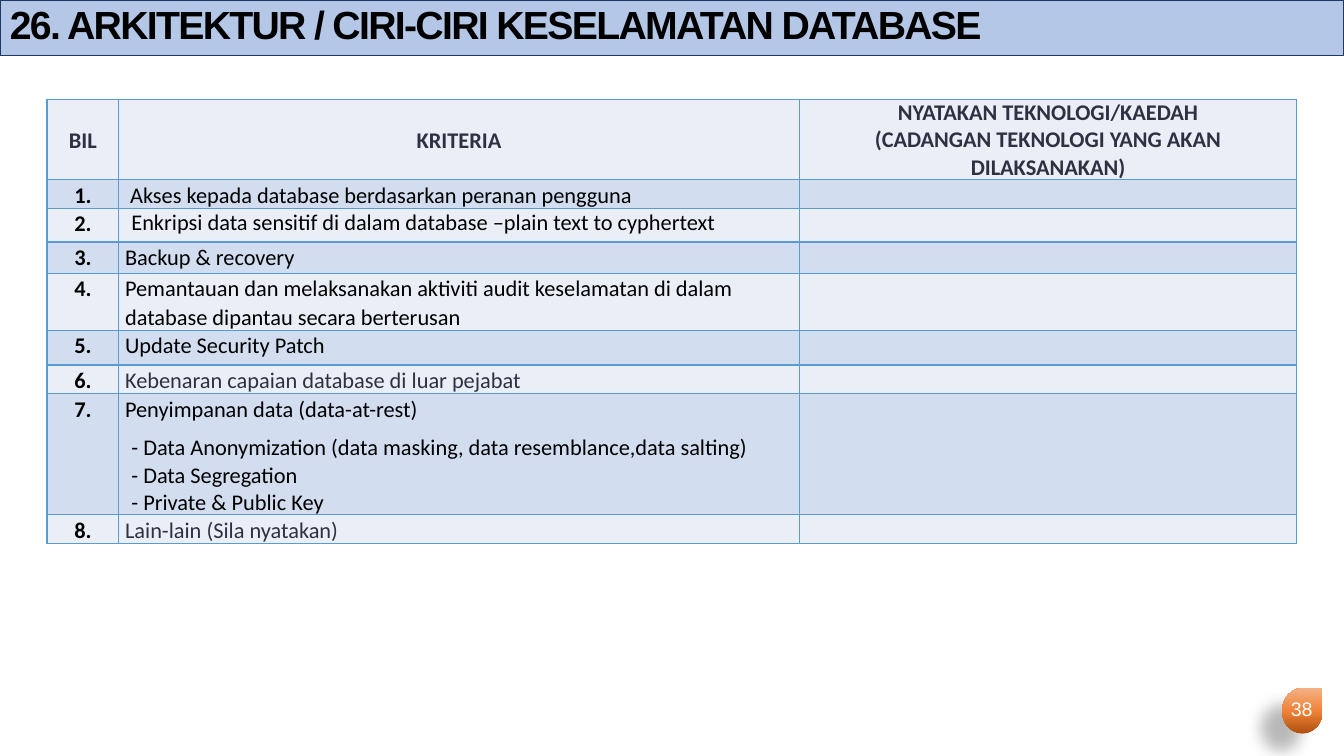
import pptx
import pptx.dml.color
import pptx.enum.shapes
import pptx.enum.text
import pptx.oxml
import pptx.oxml.ns
import pptx.util

Pt = pptx.util.Pt
RGBColor = pptx.dml.color.RGBColor
SHAPE = pptx.enum.shapes.MSO_SHAPE
ALIGN = pptx.enum.text.PP_ALIGN
ANCHOR = pptx.enum.text.MSO_ANCHOR

BLACK = RGBColor(0x00, 0x00, 0x00)
WHITE = RGBColor(0xFF, 0xFF, 0xFF)
SLATE = RGBColor(0x2C, 0x32, 0x42)
NAVY = RGBColor(0x20, 0x38, 0x64)
BANNER = RGBColor(0xB4, 0xC7, 0xE7)
PALE = RGBColor(0xEA, 0xEF, 0xF7)
BAND = RGBColor(0xD2, 0xDE, 0xEF)
BORDER = RGBColor(0x5B, 0x9B, 0xD5)
RUST = RGBColor(0xB0, 0x50, 0x0F)
ORANGE = RGBColor(0xEE, 0x81, 0x37)
PEACH = RGBColor(0xF4, 0xB1, 0x83)

COLUMN_WIDTHS = [51.3, 486, 355.5]
HEADER_HEIGHT = 57.5
HEADERS = [
    ["BIL"],
    ["KRITERIA"],
    ["NYATAKAN TEKNOLOGI/KAEDAH", "(CADANGAN TEKNOLOGI YANG AKAN DILAKSANAKAN)"],
]
LOOSE = dict(spacing=1.07, after=8)
INDENTED = dict(indent=4.5)
CRITERIA = [
    (20.7, [(" Akses kepada database berdasarkan peranan pengguna", LOOSE)]),
    (23.8, [("Enkripsi data sensitif di dalam database –plain text to cyphertext", INDENTED)]),
    (22.3, [("Backup & recovery", LOOSE)]),
    (41, [("Pemantauan dan melaksanakan aktiviti audit keselamatan di dalam "
           "database dipantau secara berterusan", LOOSE)]),
    (24.5, [("Update Security Patch", LOOSE)]),
    (20.5, [("Kebenaran capaian database di luar pejabat", dict(LOOSE, color=SLATE))]),
    (86.4, [
        ("Penyimpanan data (data-at-rest)", LOOSE),
        ("- Data Anonymization (data masking, data resemblance,data salting)", INDENTED),
        ("- Data Segregation", INDENTED),
        ("- Private & Public Key", INDENTED),
    ]),
    (20.7, [("Lain-lain (Sila nyatakan)", dict(LOOSE, color=SLATE))]),
]


def xml(text):
    return pptx.oxml.parse_xml(text.replace(">", " " + pptx.oxml.ns.nsdecls("a") + ">", 1))


def write(p, text, size=16, font="Calibri", color=BLACK, bold=False, align=ALIGN.LEFT,
          spacing=None, after=None, indent=0, tracking=None):
    p.alignment = align
    if spacing:
        p.line_spacing = spacing
    if after:
        p.space_after = Pt(after)
    if indent:
        p._p.get_or_add_pPr().set("marL", str(Pt(indent)))
    r = p.add_run()
    r.text = text
    r.font.size = Pt(size)
    r.font.name = font
    r.font.bold = bold
    r.font.color.rgb = color
    if tracking:
        r._r.get_or_add_rPr().set("spc", str(round(tracking * 100)))


class Deck:
    font = "Arial"
    border = 1
    inset = 4.5

    def __init__(self, width, height):
        self.prs = pptx.Presentation()
        self.prs.slide_width = Pt(width)
        self.prs.slide_height = Pt(height)
        self.s = self.prs.slides.add_slide(self.prs.slide_layouts[6])

    def shape(self, kind, x, y, w, h):
        sp = self.s.shapes.add_shape(kind, Pt(x), Pt(y), Pt(w), Pt(h))
        sp.shadow.inherit = False
        return sp

    def banner(self, text, x, y, w, h):
        sp = self.shape(SHAPE.RECTANGLE, x, y, w, h)
        sp.fill.solid()
        sp.fill.fore_color.rgb = BANNER
        sp.line.color.rgb = NAVY
        sp.line.width = Pt(0.75)
        tf = sp.text_frame
        tf.vertical_anchor = ANCHOR.MIDDLE
        write(tf.paragraphs[0], text, size=28, font=self.font, bold=True,
              align=ALIGN.JUSTIFY, spacing=0.85, tracking=-1.2)

    def drop(self, x, y, w, h):
        sp = self.shape(SHAPE.TEAR, x, y, w, h)
        sp.line.fill.background()
        stops = "".join(f'<a:gs pos="{at * 1000}"><a:srgbClr val="{color}"/></a:gs>'
                        for at, color in [(0, RUST), (48, ORANGE), (100, PEACH)])
        spPr = sp._element.spPr
        spPr.find(pptx.oxml.ns.qn("a:prstGeom")).addnext(xml(
            f'<a:gradFill><a:gsLst>{stops}</a:gsLst><a:lin ang="16200000" scaled="0"/></a:gradFill>'))
        spPr.find(pptx.oxml.ns.qn("a:effectLst")).append(xml(
            f'<a:outerShdw blurRad="{Pt(11.8)}" dist="{Pt(19.7)}" dir="{141 * 60000}">'
            f'<a:srgbClr val="{BLACK}"><a:alpha val="28000"/></a:srgbClr></a:outerShdw>'))

    def label(self, text, x, y, w, h):
        tf = self.s.shapes.add_textbox(Pt(x), Pt(y), Pt(w), Pt(h)).text_frame
        tf.word_wrap = True
        write(tf.paragraphs[0], text, size=14, font=self.font, color=WHITE, align=ALIGN.CENTER)

    def cell(self, cell, lines, fill, anchor=ANCHOR.TOP):
        cell.margin_left = cell.margin_right = Pt(self.inset)
        cell.margin_top = cell.margin_bottom = 0
        cell.vertical_anchor = anchor
        cell.fill.solid()
        cell.fill.fore_color.rgb = fill
        tcPr = cell._tc.get_or_add_tcPr()
        for i, side in enumerate("LRTB"):
            tcPr.insert(i, xml(f'<a:ln{side} w="{Pt(self.border)}"><a:solidFill>'
                               f'<a:srgbClr val="{BORDER}"/></a:solidFill></a:ln{side}>'))
        tf = cell.text_frame
        for i, (text, style) in enumerate(lines):
            write(tf.add_paragraph() if i else tf.paragraphs[0], text, **style)
        if not lines:
            tf.paragraphs[0]._p.append(xml('<a:endParaRPr sz="1600"></a:endParaRPr>'))

    def table(self, x, y, widths, headers, header_height, criteria):
        heights = [header_height] + [height for height, lines in criteria]
        tbl = self.s.shapes.add_table(len(heights), len(widths), Pt(x), Pt(y),
                                      Pt(sum(widths)), Pt(sum(heights))).table
        tbl.first_row = tbl.horz_banding = False
        for column, width in zip(tbl.columns, widths):
            column.width = Pt(width)
        for row, height in zip(tbl.rows, heights):
            row.height = Pt(height)
        heading = dict(color=SLATE, bold=True, align=ALIGN.CENTER)
        for col, texts in enumerate(headers):
            style = dict(heading, **LOOSE) if len(texts) == 1 else heading
            self.cell(tbl.cell(0, col), [(text, style) for text in texts], PALE, ANCHOR.MIDDLE)
        number = dict(LOOSE, bold=True, align=ALIGN.CENTER)
        for row, (height, lines) in enumerate(criteria, 1):
            fill = BAND if row % 2 else PALE
            for col, content in enumerate([[(f"{row}.", number)], lines, []]):
                self.cell(tbl.cell(row, col), content, fill)


def main():
    deck = Deck(960, 540)
    deck.drop(915.8, 491.5, 29, 32.5)
    deck.label("38", 912.2, 494, 35.3, 28.8)
    deck.banner("26. ARKITEKTUR / CIRI-CIRI KESELAMATAN DATABASE", 0, 0, 960, 39.6)
    deck.table(33.6, 70.8, COLUMN_WIDTHS, HEADERS, HEADER_HEIGHT, CRITERIA)
    deck.prs.save("out.pptx")


if __name__ == "__main__":
    main()
